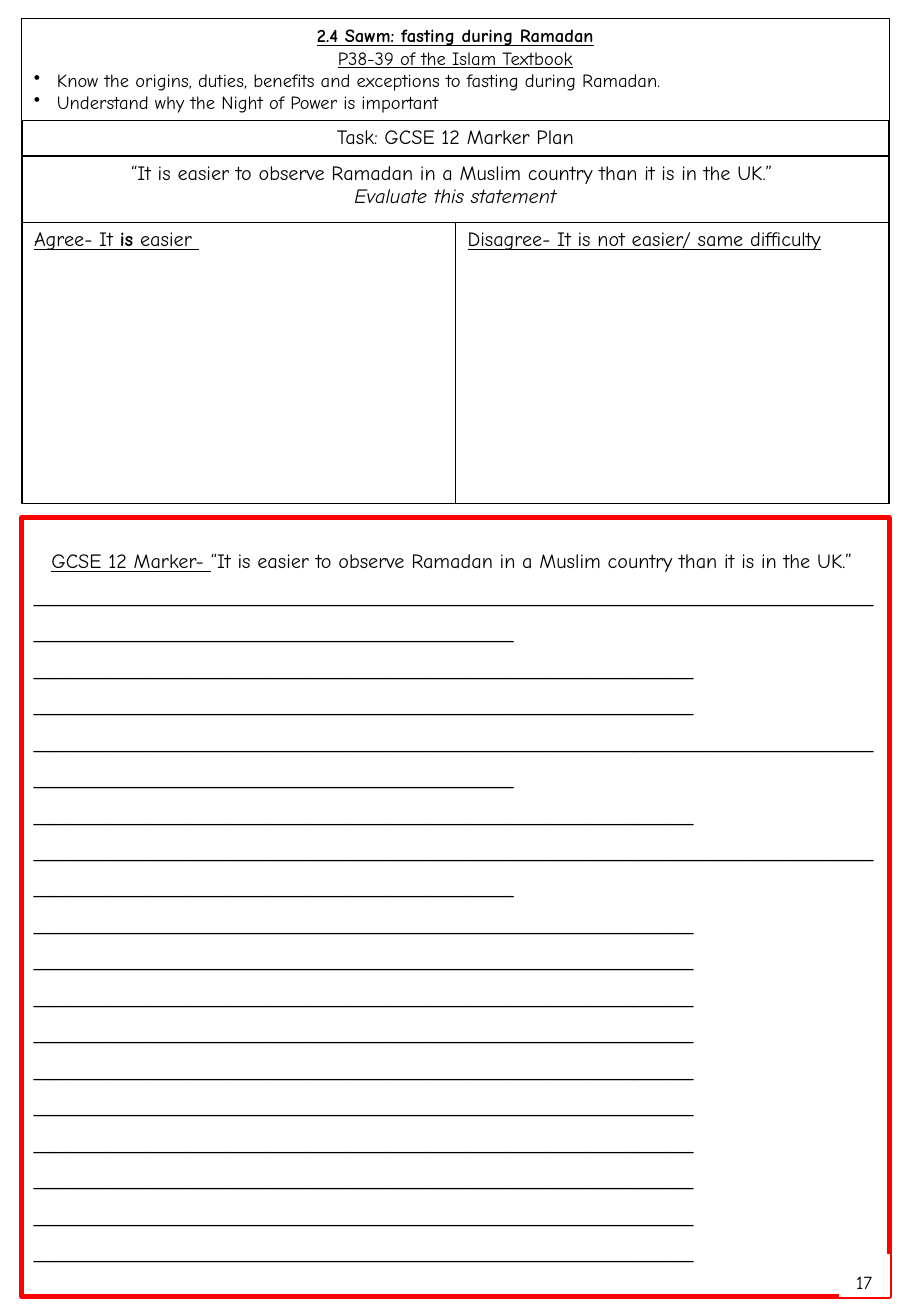
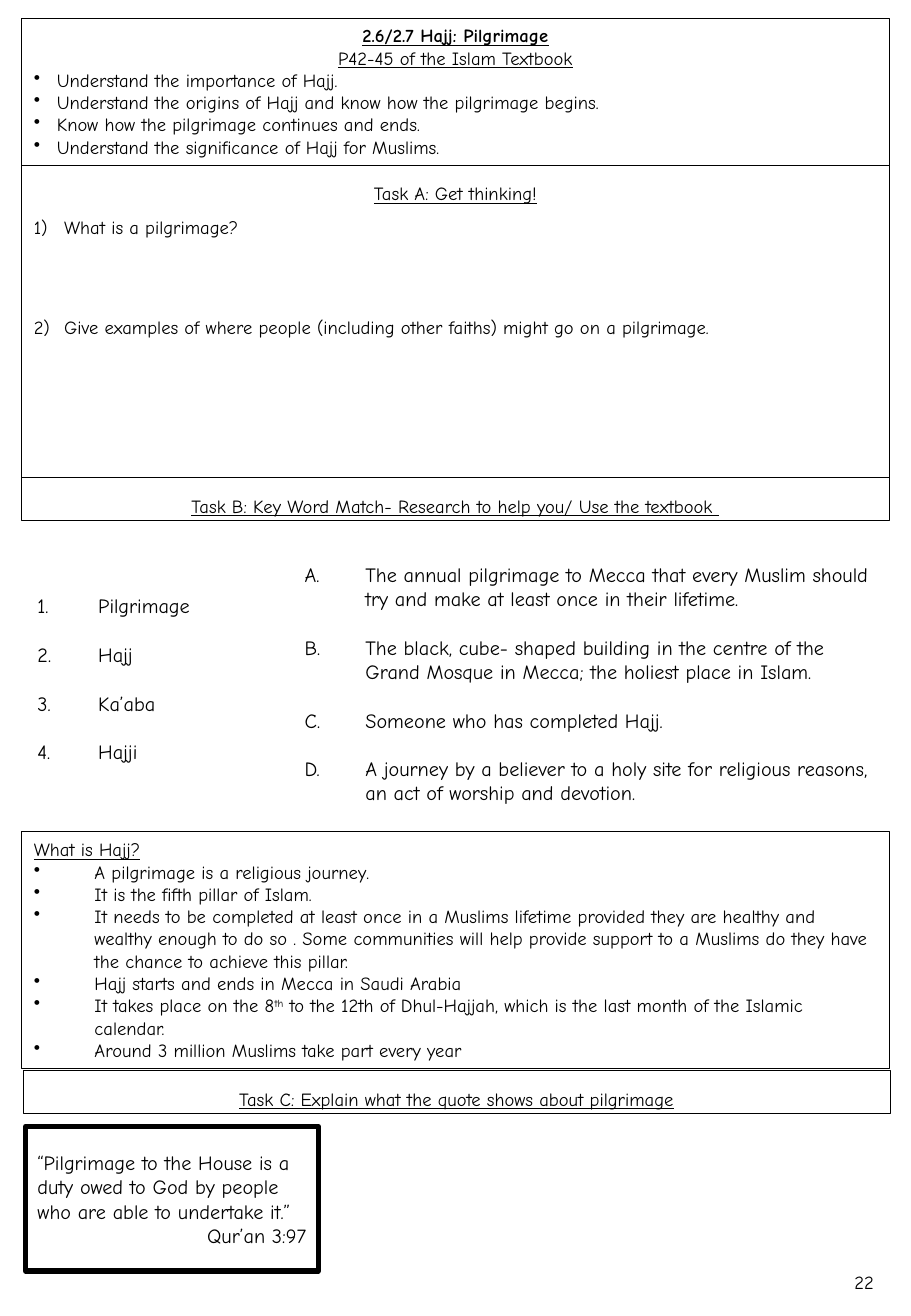
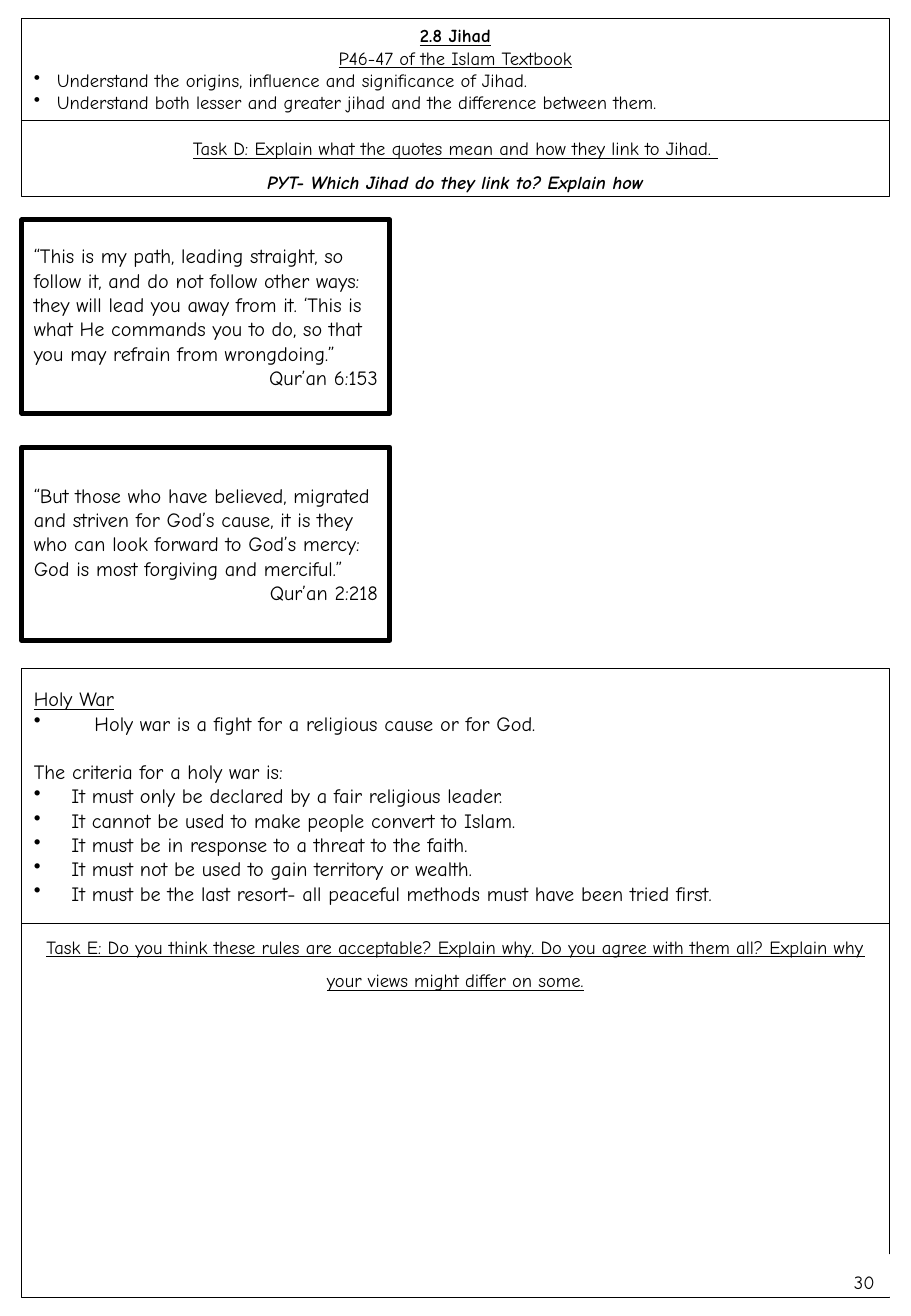
from dataclasses import dataclass

from lxml import etree
from pptx import Presentation
from pptx.dml.color import RGBColor
from pptx.enum import shapes, text
from pptx.oxml import ns
from pptx.util import Inches, Pt

FONT = "Comic Neue"
BLACK, WHITE, RED = "000000", "FFFFFF", "FF0000"
SLIDE_WIDTH, SLIDE_HEIGHT = 7.5, 10.83
LEFT, TOP, WIDTH = 0.18, 0.15, 7.14
SMALL, LARGE = 11, 12
THIN, THICK = 0.5, 3
LINE_GAP = 14.4
ALIGN = {"l": text.PP_ALIGN.LEFT, "c": text.PP_ALIGN.CENTER, "r": text.PP_ALIGN.RIGHT}
STATEMENT = "“It is easier to observe Ramadan in a Muslim country than it is in the UK.” "


@dataclass
class Para:
    """A paragraph: (text, style) spans, where style letters are b, i, u and ^."""
    spans: list
    align: str = "l"
    spacing: float = 1
    before: float = 0
    marker: str = ""
    indent: float = 0


def plain(words, style="", **options):
    """Return a paragraph with a single span."""
    return Para([(words, style)], **options)


def bullets(items, indent, marker="•", before=0):
    """Return list paragraphs, with the gap placed between items."""
    return [plain(item, marker=marker, indent=indent, before=before if index else 0)
            for index, item in enumerate(items)]


def colour(value):
    """Turn a hex string into a colour."""
    return RGBColor.from_string(value)


def set_marker(para, marker, indent):
    """Give a paragraph a hanging indent and a bullet or automatic number."""
    properties = para._p.get_or_add_pPr()
    properties.set("marL", str(Inches(indent)))
    properties.set("indent", str(-Inches(indent)))
    tag, key = ("a:buChar", "char") if marker == "•" else ("a:buAutoNum", "type")
    etree.SubElement(properties, ns.qn(tag)).set(key, marker)


def write(frame, paras, size):
    """Fill a text frame with paragraphs, run by run."""
    frame.word_wrap = True
    for index, item in enumerate(paras):
        para = frame.add_paragraph() if index else frame.paragraphs[0]
        para.alignment = ALIGN[item.align]
        para.line_spacing = item.spacing
        para.space_before = Pt(item.before)
        if item.marker:
            set_marker(para, item.marker, item.indent)
        for words, style in item.spans:
            span = para.add_run()
            span.text = words
            font = span.font
            font.name, font.size = FONT, Pt(size)
            font.color.rgb = colour(BLACK)
            font.bold, font.italic, font.underline = (letter in style for letter in "biu")
            if "^" in style:
                span._r.get_or_add_rPr().set("baseline", "30000")


def panel(page, box, paras, size=SMALL, line=BLACK, weight=THIN, middle=False):
    """Draw a white rectangle that holds paragraphs."""
    shape = page.shapes.add_shape(shapes.MSO_SHAPE.RECTANGLE, *map(Inches, box))
    shape.shadow.inherit = False
    shape.fill.solid()
    shape.fill.fore_color.rgb = colour(WHITE)
    if line:
        shape.line.color.rgb = colour(line)
        shape.line.width = Pt(weight)
    else:
        shape.line.fill.background()
    anchor = text.MSO_ANCHOR
    shape.text_frame.vertical_anchor = anchor.MIDDLE if middle else anchor.TOP
    write(shape.text_frame, paras, size)


def header(page, title, pages, aims):
    """Draw the title box and return its bottom edge."""
    height = 0.1 + 0.185 * (len(aims) + 2)
    panel(page, (LEFT, TOP, WIDTH, height), [
        plain(title, "bu", align="c"),
        plain(f"{pages} of the Islam Textbook", "u", align="c"),
        *bullets(aims, 0.19)])
    return TOP + height


def task(page, top, height, title, extra=(), left=LEFT):
    """Draw a full-width task box with an underlined title."""
    panel(page, (left, top, WIDTH, height),
          [plain(title, "u", align="c", spacing=1.5), *extra])


def quote(page, box, words, source):
    """Draw a quotation in a heavy frame with its source at the right."""
    panel(page, box, [plain(words), plain(source, align="r")], LARGE, weight=THICK, middle=True)


def page_number(page, number):
    """Place the page number in the bottom right corner."""
    panel(page, (6.91, 10.32, 0.41, 0.35),
          [plain(str(number), align="c", spacing=1.5)], line=WHITE)


def border(cell):
    """Draw a thin black line on every side of a table cell."""
    properties = cell._tc.get_or_add_tcPr()
    for index, side in enumerate(("lnL", "lnR", "lnT", "lnB")):
        line = etree.Element(ns.qn(f"a:{side}"), w=str(Pt(1)))
        fill = etree.SubElement(line, ns.qn("a:solidFill"))
        etree.SubElement(fill, ns.qn("a:srgbClr")).set("val", BLACK)
        properties.insert(index, line)


def plan_table(page, box):
    """Draw the essay plan with two merged rows above two columns."""
    left, top, width, height = box
    heights = [0.29, 0.55, height - 0.84]
    table = page.shapes.add_table(3, 2, *map(Inches, box)).table
    table.first_row = table.horz_banding = False
    for column in table.columns:
        column.width = Inches(width / 2)
    for row, row_height in zip(table.rows, heights):
        row.height = Inches(row_height)
    for cell in table.iter_cells():
        cell.fill.solid()
        cell.fill.fore_color.rgb = colour(WHITE)
        border(cell)
    for row in range(2):
        table.cell(row, 0).merge(table.cell(row, 1))
    contents = {
        (0, 0): [plain("Task: GCSE 12 Marker Plan", align="c")],
        (1, 0): [plain(STATEMENT, align="c"),
                 plain("Evaluate this statement", "i", align="c")],
        (2, 0): [Para([("Agree- It ", "u"), ("is", "bu"), (" easier ", "u")])],
        (2, 1): [plain("Disagree- It is not easier/ same difficulty", "u")],
    }
    for place, paras in contents.items():
        write(table.cell(*place).text_frame, paras, LARGE)


def answer_box(page, box):
    """Draw the red essay box with ruled writing lines."""
    short, long = 66, 132
    lengths = [long, short, short, long, short, long] + [short] * 10
    heading = Para([("GCSE 12 Marker- ", "u"), (STATEMENT, "")], align="c")
    rules = [plain("_" * length, spacing=1.5) for length in lengths]
    panel(page, box, [heading, *rules], LARGE, RED, THICK, middle=True)


def sawm(page):
    """Build the fasting page."""
    answer_box(page, (LEFT, 4.26, WIDTH, 6.41))
    page_number(page, 17)
    bottom = header(page, "2.4 Sawm: fasting during Ramadan", "P38-39", [
        "Know the origins, duties, benefits and exceptions to fasting during Ramadan.",
        "Understand why the Night of Power is important"])
    plan_table(page, (LEFT, bottom, WIDTH, 3.15))


def key_words(page, top):
    """Place the words to match and their meanings side by side."""
    words = ["Pilgrimage", "Hajj", "Ka’aba", "Hajji"]
    meanings = [
        "The annual pilgrimage to Mecca that every Muslim should try and make at least once "
        "in their lifetime.",
        "The black, cube- shaped building in the centre of the Grand Mosque in Mecca; "
        "the holiest place in Islam.",
        "Someone who has completed Hajj.",
        "A journey by a believer to a holy site for religious reasons, "
        "an act of worship and devotion."]
    columns = [(0.21, top, 2.05, words, "arabicPeriod"),
               (2.41, top + 0.04, 4.91, meanings, "alphaUcPeriod")]
    for left, column_top, width, items, marker in columns:
        panel(page, (left, column_top, width, 2.45),
              bullets(items, 0.5, marker, LINE_GAP), LARGE, line=None, middle=True)


def hajj_facts(page, box):
    """Draw the box of facts about Hajj."""
    facts = bullets([
        "A pilgrimage is a religious journey.",
        "It is the fifth pillar of Islam.",
        "It needs to be completed at least once in a Muslims lifetime provided they are healthy "
        "and wealthy enough to do so . Some communities will help provide support to a Muslims "
        "do they have the chance to achieve this pillar.",
        "Hajj starts and ends in Mecca in Saudi Arabia",
        "It takes place on the 8",
        "Around 3 million Muslims take part every year"], 0.5)
    facts[4].spans += [
        ("th", "^"),
        (" to the 12th of Dhul-Hajjah, which is the last month of the Islamic calendar.", "")]
    panel(page, box, [plain("What is Hajj?", "u"), *facts], middle=True)


def hajj(page):
    """Build the pilgrimage page."""
    page_number(page, 22)
    bottom = header(page, "2.6/2.7 Hajj: Pilgrimage", "P42-45", [
        "Understand the importance of Hajj.",
        "Understand the origins of Hajj and know how the pilgrimage begins.",
        "Know how the pilgrimage continues and ends.",
        "Understand the significance of Hajj for Muslims."])
    questions = bullets([
        "What is a pilgrimage?",
        "Give examples of where people (including other faiths) might go on a pilgrimage."],
        0.25, "arabicParenR", 39.6)
    for question in questions:
        question.spacing = 1.5
    task(page, bottom, 2.57, "Task A: Get thinking!", questions)
    task(page, bottom + 2.57, 0.35,
         "Task B: Key Word Match- Research to help you/ Use the textbook ")
    key_words(page, 4.36)
    hajj_facts(page, (LEFT, 6.84, WIDTH, 1.95))
    task(page, 8.81, 0.35, "Task C: Explain what the quote shows about pilgrimage", left=0.19)
    quote(page, (0.21, 9.27, 2.41, 1.19),
          "“Pilgrimage to the House is a duty owed to God by people who are able to "
          "undertake it.”", "Qur’an 3:97")


def holy_war(page, box):
    """Draw the box with the criteria for a holy war."""
    panel(page, box, [
        plain("Holy War", "u"),
        *bullets(["Holy war is a fight for a religious cause or for God."], 0.5),
        plain("The criteria for a holy war is:", before=LINE_GAP),
        *bullets([
            "It must only be declared by a fair religious leader.",
            "It cannot be used to make people convert to Islam.",
            "It must be in response to a threat to the faith.",
            "It must not be used to gain territory or wealth.",
            "It must be the last resort- all peaceful methods must have been tried first."],
            0.31)], LARGE, middle=True)


def jihad(page):
    """Build the jihad page."""
    task(page, 7.56, 3.12,
         "Task E: Do you think these rules are acceptable? Explain why. Do you agree with them "
         "all? Explain why your views might differ on some.")
    page_number(page, 30)
    bottom = header(page, "2.8 Jihad", "P46-47", [
        "Understand the origins, influence and significance of Jihad.",
        "Understand both lesser and greater jihad and the difference between them."])
    task(page, bottom, 0.63,
         "Task D: Explain what the quotes mean and how they link to Jihad. ",
         [plain("PYT- Which Jihad do they link to? Explain how", "bi", align="c", spacing=1.5)])
    quotes = [
        ("“This is my path, leading straight, so follow it, and do not follow other ways: they "
         "will lead you away from it. ‘This is what He commands you to do, so that you may "
         "refrain from wrongdoing.”", "Qur’an 6:153"),
        ("“But those who have believed, migrated and striven for God’s cause, it is they who "
         "can look forward to God’s mercy: God is most forgiving and merciful.”",
         "Qur’an 2:218")]
    for index, (words, source) in enumerate(quotes):
        quote(page, (LEFT, 1.81 + 1.87 * index, 3.03, 1.59), words, source)
    holy_war(page, (LEFT, 5.5, WIDTH, 2.1))


def main():
    """Build and save the deck."""
    deck = Presentation()
    deck.slide_width, deck.slide_height = Inches(SLIDE_WIDTH), Inches(SLIDE_HEIGHT)
    for build in (sawm, hajj, jihad):
        build(deck.slides.add_slide(deck.slide_layouts[6]))
    deck.save("out.pptx")


if __name__ == "__main__":
    main()
